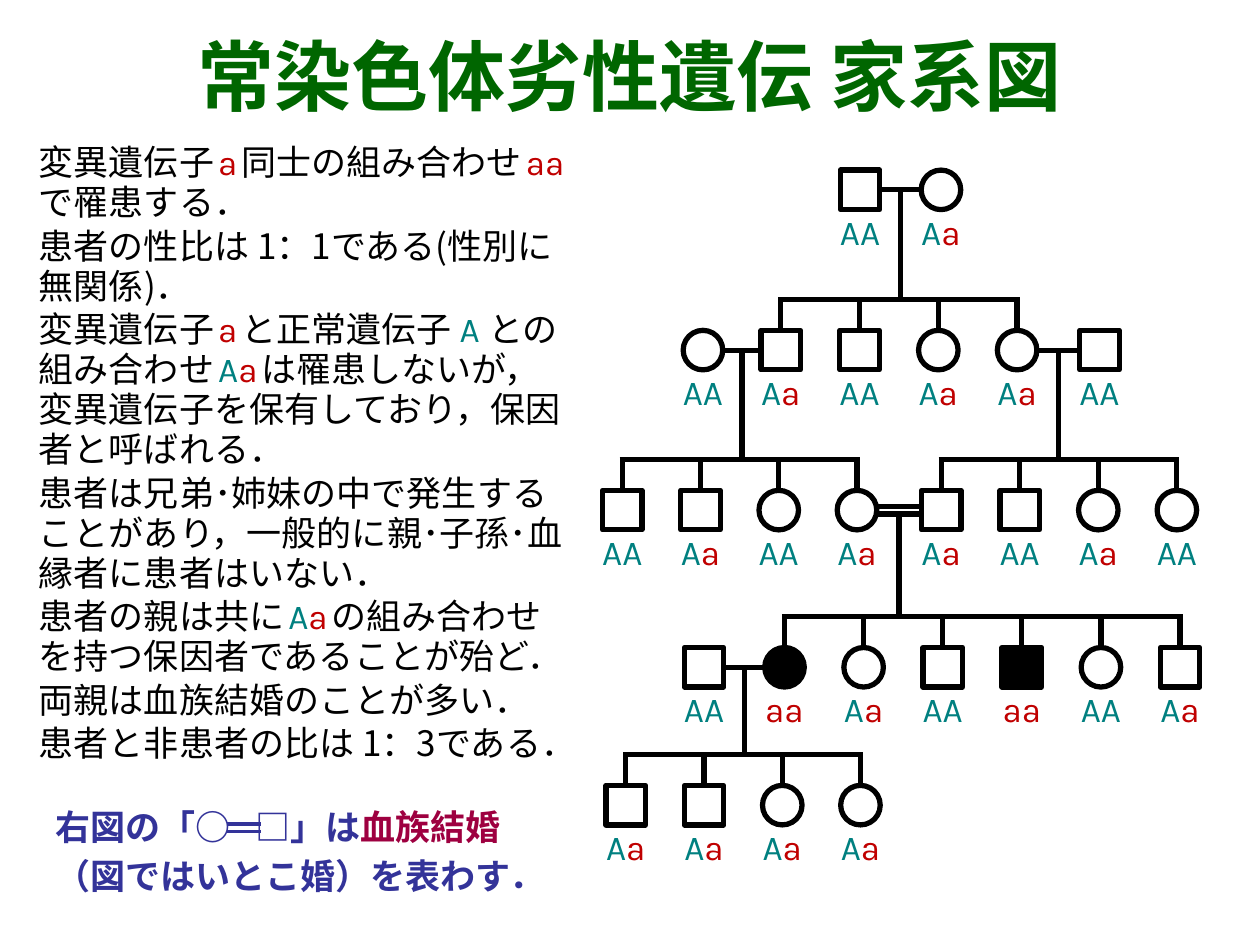
"""Build a slide explaining autosomal recessive inheritance with a pedigree."""
from itertools import groupby

from lxml.etree import SubElement
from pptx import Presentation
from pptx.dml.color import RGBColor
from pptx.enum.shapes import MSO_CONNECTOR as Line, MSO_SHAPE as Shape
from pptx.enum.text import MSO_ANCHOR as Anchor, PP_ALIGN as Align
from pptx.oxml.ns import qn
from pptx.util import Pt

COLORS = {
    "black": "000000", "green": "006600", "teal": "008080",
    "red": "C00000", "indigo": "333399", "crimson": "9E0040",
}
ALLELES = {"A": "teal", "a": "red"}
EMPHASIS = {"血族結婚": "crimson"}
SYMBOLS = {"□": Shape.RECTANGLE, "○": Shape.OVAL}

TITLE = "常染色体劣性遺伝 家系図"
RULES = [
    "変異遺伝子| |a| |同士の組み合わせ| |aa| |で罹患する．",
    "患者の性比は 1：1である(性別に無関係)．",
    "変異遺伝子| |a| |と正常遺伝子 |A |との組み合わせ| |Aa| |は罹患しないが，"
    "変異遺伝子を保有しており，保因者と呼ばれる．",
    "患者は兄弟･姉妹の中で発生することがあり，一般的に親･子孫･血縁者に患者はいない．",
    "患者の親は共に| |Aa| |の組み合わせを持つ保因者であることが殆ど．",
    "両親は血族結婚のことが多い．",
    "患者と非患者の比は 1：3である．",
]
CAPTION = ["右図の「○|　|□」は|血族結婚", "（図ではいとこ婚）を表わす．"]

ROWS = [97.2, 188.8, 280.2, 370, 448.8]
SINGLES = [
    (0, 480.2, "□AA"), (0, 526.4, "○Aa"), (1, 390.4, "○AA"),
    (1, 617, "□AA"), (3, 391, "□AA"),
]
SIBSHIPS = [
    (1, 434.9, 45, "□Aa □AA ○Aa ○Aa"),
    (2, 344.3, 44.7, "□AA □Aa ○AA ○Aa"),
    (2, 526.5, 44.9, "□Aa □AA ○Aa ○AA"),
    (3, 437, 45.2, "○aa ○Aa □AA □aa ○AA □Aa"),
    (4, 346.3, 44.7, "□Aa □Aa ○Aa ○Aa"),
]
COUPLES = [
    (0, 480.2, 526.4, False), (1, 390.4, 434.9, False),
    (1, 569.9, 617, False), (2, 478.4, 526.5, True), (3, 391, 437, False),
]


class PedigreeSlide:
    """Hold the style and the slide, and draw each kind of element."""

    text_font, gene_font = "Noto Sans CJK JP", "Karla"
    symbol, stroke, rise, gap = 22.6, 3, 17.8, 2.2

    def __init__(self, deck):
        self.shapes = deck.slides.add_slide(deck.slide_layouts[6]).shapes

    def color(self, name):
        return RGBColor.from_string(COLORS[name])

    def set_font(self, font, size, color, name, bold=False):
        font.size, font.name, font.bold = Pt(size), name, bold
        font.color.rgb = self.color(color)
        SubElement(font._element, qn("a:ea")).set("typeface", name)

    def add_genes(self, paragraph, genes):
        for allele, letters in groupby(genes, str.strip):
            run = paragraph.add_run()
            run.text = "".join(letters)
            run.font.name = self.gene_font
            run.font.color.rgb = self.color(ALLELES.get(allele, "teal"))

    def add_piece(self, paragraph, piece, space_size):
        if piece.strip() and set(piece.strip()) <= set(ALLELES):
            self.add_genes(paragraph, piece)
            return
        run = paragraph.add_run()
        run.text = piece
        if not piece.strip():
            run.font.size = Pt(space_size)
        if piece in EMPHASIS:
            run.font.color.rgb = self.color(EMPHASIS[piece])

    def text(self, box, paragraphs, size=20, color="black", bold=False, align=Align.LEFT,
             pitch=None, before=0, space_size=10, anchor=Anchor.TOP, inset=None):
        frame = self.shapes.add_textbox(*map(Pt, box)).text_frame
        frame.word_wrap, frame.vertical_anchor = True, anchor
        if inset is not None:
            frame.margin_left = frame.margin_right = Pt(inset)
            frame.margin_top = frame.margin_bottom = Pt(inset)
        for index, content in enumerate(paragraphs):
            paragraph = frame.add_paragraph() if index else frame.paragraphs[0]
            paragraph.alignment, paragraph.space_before = align, Pt(before)
            if pitch:
                paragraph.line_spacing = Pt(pitch)
            self.set_font(paragraph.font, size, color, self.text_font, bold)
            for piece in content.split("|"):
                self.add_piece(paragraph, piece, space_size)

    def line(self, x1, y1, x2, y2, color="black", width=stroke):
        link = self.shapes.add_connector(Line.STRAIGHT, *map(Pt, (x1, y1, x2, y2)))
        link.line.color.rgb, link.line.width = self.color(color), Pt(width)
        SubElement(link._element.spPr, qn("a:effectLst"))

    def double_line(self, x1, x2, y, **style):
        for offset in (-self.gap, self.gap):
            self.line(x1, y + offset, x2, y + offset, **style)

    def person(self, row, left, code):
        sex, genes = code[0], code[1:]
        top, size = ROWS[row], self.symbol
        figure = self.shapes.add_shape(SYMBOLS[sex], *map(Pt, (left, top, size, size)))
        figure.shadow.inherit = False
        figure.line.color.rgb, figure.line.width = self.color("black"), Pt(self.stroke)
        if genes == "aa":
            figure.fill.solid()
            figure.fill.fore_color.rgb = self.color("black")
        else:
            figure.fill.background()
        label = (left + size / 2 - 20, top + size + 0.3, 40, 24.5)
        self.text(label, [genes], align=Align.CENTER, inset=0)

    def sibship(self, row, left, step, codes):
        members = codes.split()
        top, first = ROWS[row], left + self.symbol / 2
        bar, last = top - self.rise, first + step * (len(members) - 1)
        self.line(first - self.stroke / 2, bar, last + self.stroke / 2, bar)
        for index, code in enumerate(members):
            self.line(first + index * step, top, first + index * step, bar)
            self.person(row, left + index * step, code)

    def couple(self, row, left, right, related):
        start, level = left + self.symbol, ROWS[row] + self.symbol / 2
        middle = (start + right) / 2
        if related:
            self.double_line(start, right, level)
        else:
            self.line(start, level, right, level)
        origin = level + self.gap if related else level
        self.line(middle, origin, middle, ROWS[row + 1] - self.rise)


def main():
    deck = Presentation()
    deck.slide_width, deck.slide_height = Pt(720), Pt(540)
    slide = PedigreeSlide(deck)
    slide.text((20, 14.4, 680, 57), [TITLE], size=44, color="green", bold=True,
               align=Align.CENTER, anchor=Anchor.MIDDLE)
    slide.text((15.1, 78, 317, 412), RULES, pitch=22.86, before=2)
    slide.text((24.5, 457, 325, 60), CAPTION, color="indigo", bold=True,
               pitch=24, before=4, space_size=14)
    slide.double_line(129.6, 149, 473, color="indigo", width=2)
    for single in SINGLES:
        slide.person(*single)
    for sibship in SIBSHIPS:
        slide.sibship(*sibship)
    for couple in COUPLES:
        slide.couple(*couple)
    deck.save("out.pptx")


if __name__ == "__main__":
    main()
